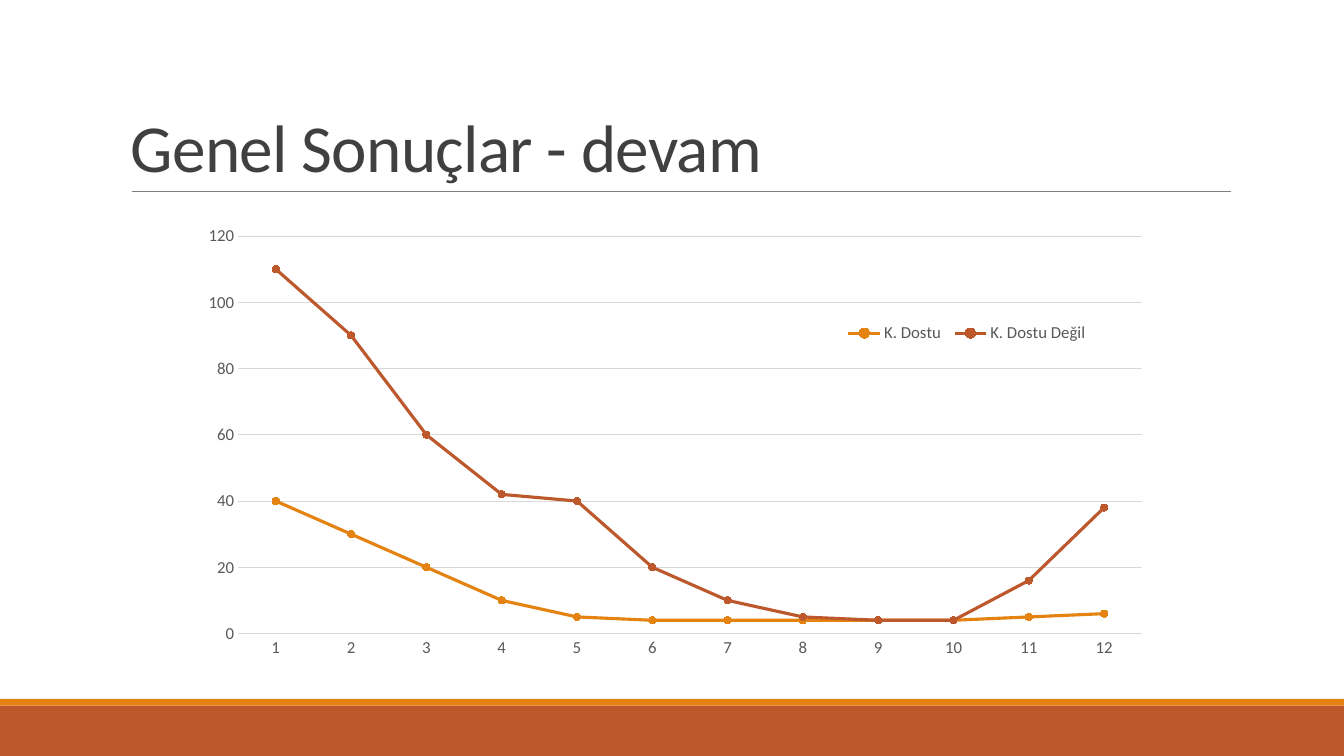
from lxml.etree import SubElement
from pptx import Presentation
from pptx.chart.data import CategoryChartData
from pptx.dml.color import RGBColor
from pptx.enum.chart import XL_CHART_TYPE, XL_LEGEND_POSITION, XL_MARKER_STYLE, XL_TICK_MARK
from pptx.enum.shapes import MSO_CONNECTOR, MSO_SHAPE
from pptx.enum.text import MSO_ANCHOR
from pptx.oxml import parse_xml
from pptx.oxml.ns import nsdecls, qn
from pptx.util import Pt

# Content
TITLE = "Genel Sonuçlar - devam"
CATEGORIES = [str(number) for number in range(1, 13)]
SERIES = [
    ("K. Dostu", [40, 30, 20, 10, 5, 4, 4, 4, 4, 4, 5, 6], "orange"),
    ("K. Dostu Değil", [110, 90, 60, 42, 40, 20, 10, 5, 4, 4, 16, 38], "rust"),
]

# Theme and layout, lengths in points
THEME = {
    "font": "Calibri", "title_size": 48, "chart_size": 12,
    "title": "404040", "label": "595959", "grid": "D9D9D9", "rule": "808080",
    "orange": "E48312", "rust": "BD582C",
}
WIDTH, HEIGHT = 960, 540
BANDS = [("rust", 36), ("orange", 4.8)]  # stacked upwards from the bottom edge
RULE = (94.2, 136.8, 879.3, 136.8)
TITLE_BOX = (86.4, 22.3, 792, 114.5)
CHART_BOX = (135.4, 154.8, 694.1, 346.3)
# Fractions of the chart: left, top, width, height
PLOT_AREA = (0.05, 0.04, 0.93, 0.82)
LEGEND_AREA = (0.67, 0.21, 0.26, 0.06)


def color(name):
    return RGBColor.from_string(THEME[name])


def points(values):
    return [Pt(value) for value in values]


def apply_format(target, values):
    for name, value in values.items():
        setattr(target, name, value)


def format_font(font, size, color_name):
    apply_format(font, {"name": THEME["font"], "size": Pt(THEME[size]), "bold": False})
    font.color.rgb = color(color_name)


def format_line(line, color_name, width):
    line.color.rgb = color(color_name)
    line.width = Pt(width)


def place(element, index, area, inner=False):
    """Give a chart part a manual layout."""
    for old_layout in element.findall(qn("c:layout")):
        element.remove(old_layout)
    layout = parse_xml(f"<c:layout {nsdecls('c')}><c:manualLayout/></c:layout>")
    settings = [("layoutTarget", "inner")] if inner else []
    settings += [("xMode", "edge"), ("yMode", "edge")]
    settings += zip("xywh", area)
    for tag, value in settings:
        SubElement(layout[0], qn(f"c:{tag}")).set("val", str(value))
    element.insert(index, layout)


def add_bands(slide):
    top = HEIGHT
    for color_name, height in BANDS:
        top -= height
        band = slide.shapes.add_shape(MSO_SHAPE.RECTANGLE, *points((0, top, WIDTH, height)))
        band.shadow.inherit = False
        band.fill.solid()
        band.fill.fore_color.rgb = color(color_name)
        band.line.fill.background()


def add_title(slide):
    rule = slide.shapes.add_connector(MSO_CONNECTOR.STRAIGHT, *points(RULE))
    format_line(rule.line, "rule", 0.5)
    SubElement(rule.element.spPr, qn("a:effectLst"))

    frame = slide.shapes.add_textbox(*points(TITLE_BOX)).text_frame
    apply_format(frame, {"word_wrap": True, "vertical_anchor": MSO_ANCHOR.BOTTOM})
    paragraph = frame.paragraphs[0]
    paragraph.line_spacing = 0.85
    run = paragraph.add_run()
    run.text = TITLE
    format_font(run.font, "title_size", "title")
    run.font._element.set("spc", "-50")


def add_results_chart(slide):
    data = CategoryChartData()
    data.categories = CATEGORIES
    for name, values, _ in SERIES:
        data.add_series(name, values)
    chart = slide.shapes.add_chart(XL_CHART_TYPE.LINE_MARKERS, *points(CHART_BOX), data).chart
    apply_format(chart, {"has_title": False, "has_legend": True})
    format_font(chart.font, "chart_size", "label")
    chart.plots[0].vary_by_categories = False

    # Axes
    for axis in (chart.category_axis, chart.value_axis):
        apply_format(axis, {"major_tick_mark": XL_TICK_MARK.NONE,
                            "minor_tick_mark": XL_TICK_MARK.NONE})
        format_font(axis.tick_labels.font, "chart_size", "label")
    format_line(chart.category_axis.format.line, "grid", 0.75)
    apply_format(chart.value_axis, {"minimum_scale": 0, "maximum_scale": 120,
                                    "major_unit": 20, "has_major_gridlines": True})
    chart.value_axis.format.line.fill.background()
    format_line(chart.value_axis.major_gridlines.format.line, "grid", 0.75)

    # Lines and markers
    for series, (_, _, color_name) in zip(chart.plots[0].series, SERIES):
        series.smooth = False
        format_line(series.format.line, color_name, 2.25)
        marker = series.marker
        apply_format(marker, {"style": XL_MARKER_STYLE.CIRCLE, "size": 5})
        marker.format.fill.solid()
        marker.format.fill.fore_color.rgb = color(color_name)
        format_line(marker.format.line, color_name, 0.75)

    # Legend and plot area
    apply_format(chart.legend, {"position": XL_LEGEND_POSITION.BOTTOM,
                                "include_in_layout": False})
    format_font(chart.legend.font, "chart_size", "label")
    place(chart.legend._element, 1, LEGEND_AREA)
    place(chart._chartSpace.chart.plotArea, 0, PLOT_AREA, inner=True)


def main():
    presentation = Presentation()
    apply_format(presentation, {"slide_width": Pt(WIDTH), "slide_height": Pt(HEIGHT)})
    slide = presentation.slides.add_slide(presentation.slide_layouts[6])
    add_bands(slide)
    add_title(slide)
    add_results_chart(slide)
    presentation.save("out.pptx")


if __name__ == "__main__":
    main()
